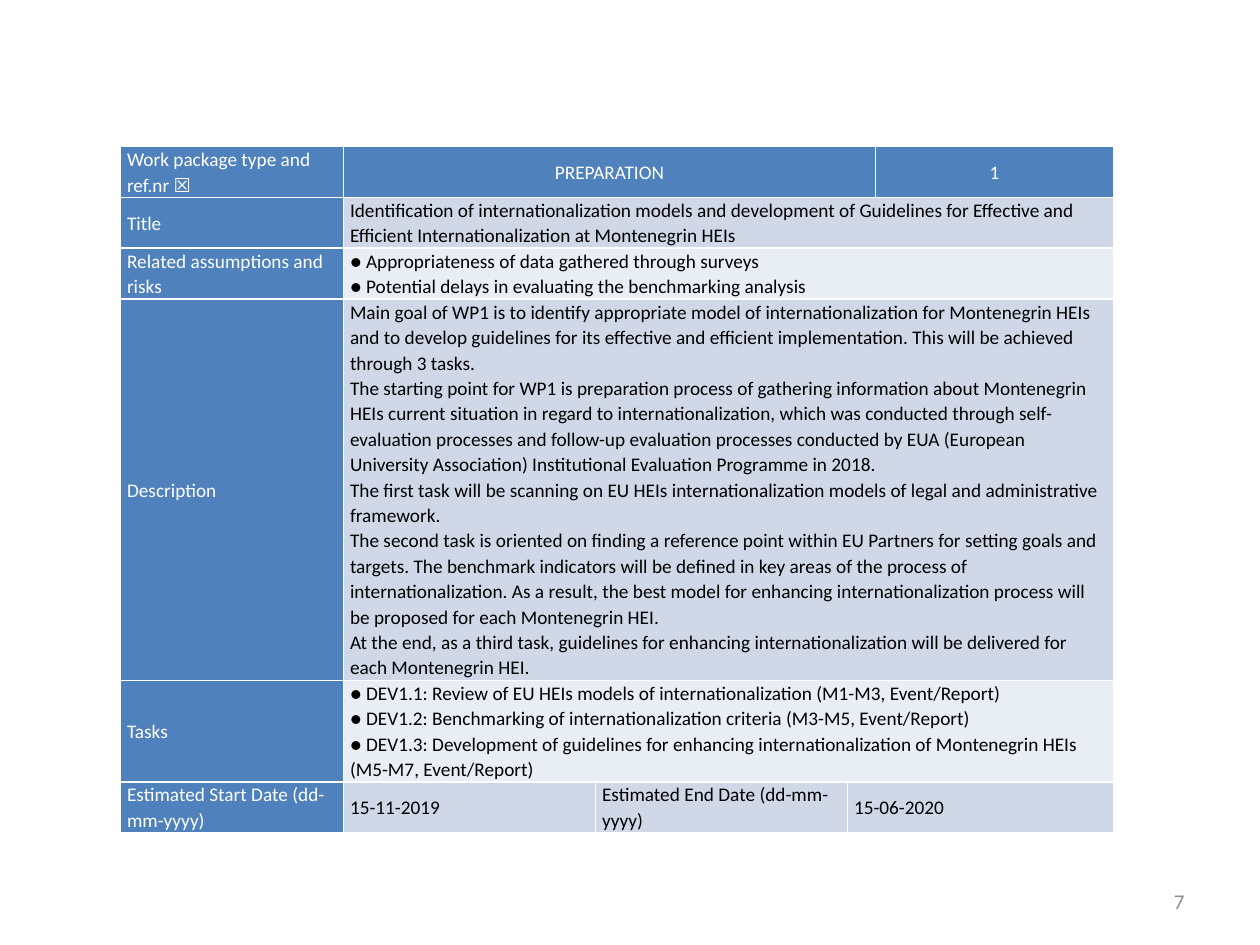
import pptx
import pptx.dml.color
import pptx.enum.text
import pptx.oxml
import pptx.oxml.ns
import pptx.util

Pt = pptx.util.Pt
ALIGN = pptx.enum.text.PP_ALIGN
MIDDLE = pptx.enum.text.MSO_ANCHOR.MIDDLE

WHITE, BLACK, GREY = "FFFFFF", "000000", "8C8C8C"
LABEL_BLUE, BAND_DARK, BAND_LIGHT = "4F81BD", "D0D8E8", "E9EDF4"

COLUMN_WIDTHS = [127.44, 144, 144, 15.84, 136.08]
ROW_HEIGHTS = [29, 29, 29, 218, 58, 29]

DESCRIPTION = [
    "Main goal of WP1 is to identify appropriate model of internationalization for Montenegrin HEIs "
    "and to develop guidelines for its effective and efficient implementation. "
    "This will be achieved through 3 tasks.",
    "The starting point for WP1 is preparation process of gathering information about Montenegrin HEIs "
    "current situation in regard to internationalization, which was conducted through self-evaluation "
    "processes and follow-up evaluation processes conducted by EUA (European University Association) "
    "Institutional Evaluation Programme in 2018.",
    "The first task will be scanning on EU HEIs internationalization models of legal and "
    "administrative framework.",
    "The second task is oriented on finding a reference point within EU Partners for setting goals and "
    "targets. The benchmark indicators will be defined in key areas of the process of "
    "internationalization. As a result, the best model for enhancing internationalization process "
    "will be proposed for each Montenegrin HEI.",
    "At the end, as a third task, guidelines for enhancing internationalization will be delivered for "
    "each Montenegrin HEI.",
]

# Each row lists its cells as (columns spanned, paragraphs).
WORK_PACKAGE = [
    [(1, ["Work package type and ref.nr ☒"]), (3, ["PREPARATION"]), (1, ["1"])],
    [(1, ["Title"]),
     (4, ["Identification of internationalization models and development of Guidelines for "
          "Effective and Efficient Internationalization at Montenegrin HEIs"])],
    [(1, ["Related assumptions and risks"]),
     (4, ["● Appropriateness of data gathered through surveys",
          "● Potential delays in evaluating the benchmarking analysis"])],
    [(1, ["Description"]), (4, DESCRIPTION)],
    [(1, ["Tasks"]),
     (4, ["● DEV1.1: Review of EU HEIs models of internationalization (M1-M3, Event/Report)",
          "● DEV1.2: Benchmarking of internationalization criteria (M3-M5, Event/Report)",
          "● DEV1.3: Development of guidelines for enhancing internationalization of "
          "Montenegrin HEIs (M5-M7, Event/Report)"])],
    [(1, ["Estimated Start Date (dd-mm-yyyy)"]), (1, ["15-11-2019"]),
     (1, ["Estimated End Date (dd-mm-yyyy)"]), (2, ["15-06-2020"])],
]


def rgb(color):
    return pptx.dml.color.RGBColor.from_string(color)


def write(frame, paragraphs, size, color, align, line_spacing=None):
    frame.text = "\n".join(paragraphs)
    for paragraph in frame.paragraphs:
        paragraph.alignment = align
        paragraph.line_spacing = line_spacing
        paragraph.font.name = "Calibri"
        paragraph.font.size = Pt(size)
        paragraph.font.color.rgb = rgb(color)


def add_borders(cell):
    properties = cell._tc.get_or_add_tcPr()
    for side in "LRTB":
        properties.append(pptx.oxml.parse_xml(
            f'<a:ln{side} {pptx.oxml.ns.nsdecls("a")} w="{Pt(1)}"><a:solidFill>'
            f'<a:srgbClr val="{WHITE}"/></a:solidFill></a:ln{side}>'))


def fill_cell(cell, paragraphs, fill, color, align):
    cell.fill.solid()
    cell.fill.fore_color.rgb = rgb(fill)
    cell.vertical_anchor = MIDDLE
    cell.margin_left = cell.margin_right = Pt(3.6)
    cell.margin_top = cell.margin_bottom = 0
    write(cell.text_frame, paragraphs, 11, color, align, 1.07)


def add_work_package(slide, left, top, width, height):
    table = slide.shapes.add_table(len(ROW_HEIGHTS), len(COLUMN_WIDTHS),
                                   Pt(left), Pt(top), Pt(width), Pt(height)).table
    table.first_row = table.horz_banding = False
    for column, column_width in zip(table.columns, COLUMN_WIDTHS):
        column.width = Pt(column_width)

    for row_index, cells in enumerate(WORK_PACKAGE):
        table.rows[row_index].height = Pt(ROW_HEIGHTS[row_index])
        for cell in table.rows[row_index].cells:
            add_borders(cell)

        is_header = row_index == 0
        band = BAND_DARK if row_index % 2 else BAND_LIGHT
        column_index = 0
        for span, paragraphs in cells:
            is_label = column_index == 0
            cell = table.cell(row_index, column_index)
            if span > 1:
                cell.merge(table.cell(row_index, column_index + span - 1))
            fill, color = (LABEL_BLUE, WHITE) if is_header or is_label else (band, BLACK)
            align = ALIGN.CENTER if is_header and not is_label else ALIGN.LEFT
            fill_cell(cell, paragraphs, fill, color, align)
            column_index += span


def add_page_number(slide, left, top, width, height):
    frame = slide.shapes.add_textbox(Pt(left), Pt(top), Pt(width), Pt(height)).text_frame
    frame.word_wrap = True
    frame.vertical_anchor = MIDDLE
    write(frame, ["7"], 12, GREY, ALIGN.RIGHT)


def main():
    deck = pptx.Presentation()
    deck.slide_width, deck.slide_height = Pt(720), Pt(540)
    slide = deck.slides.add_slide(deck.slide_layouts[6])
    add_page_number(slide, 516.24, 500.4, 167.76, 28.8)
    add_work_package(slide, 69, 83.8, sum(COLUMN_WIDTHS), sum(ROW_HEIGHTS))
    deck.save("out.pptx")


if __name__ == "__main__":
    main()
